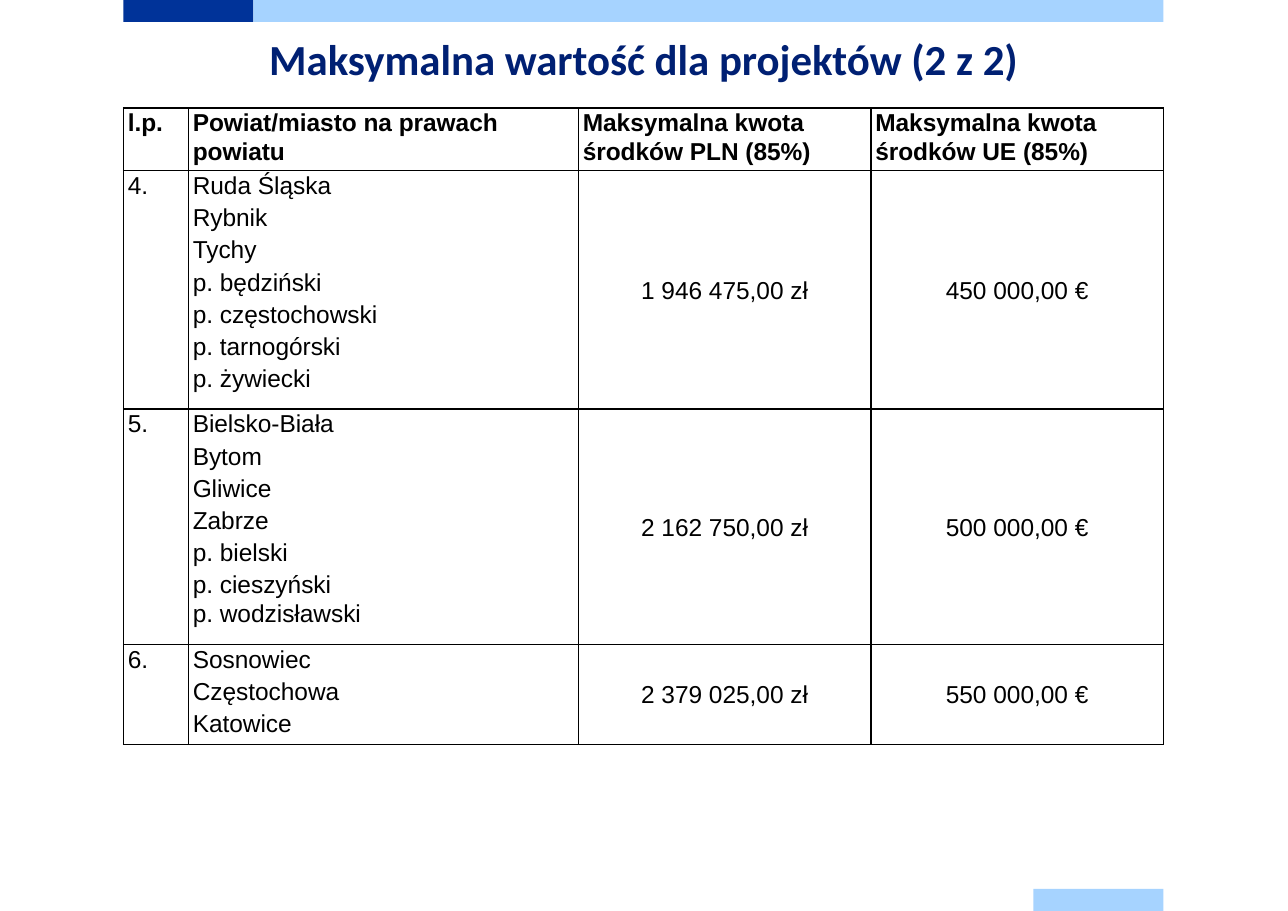
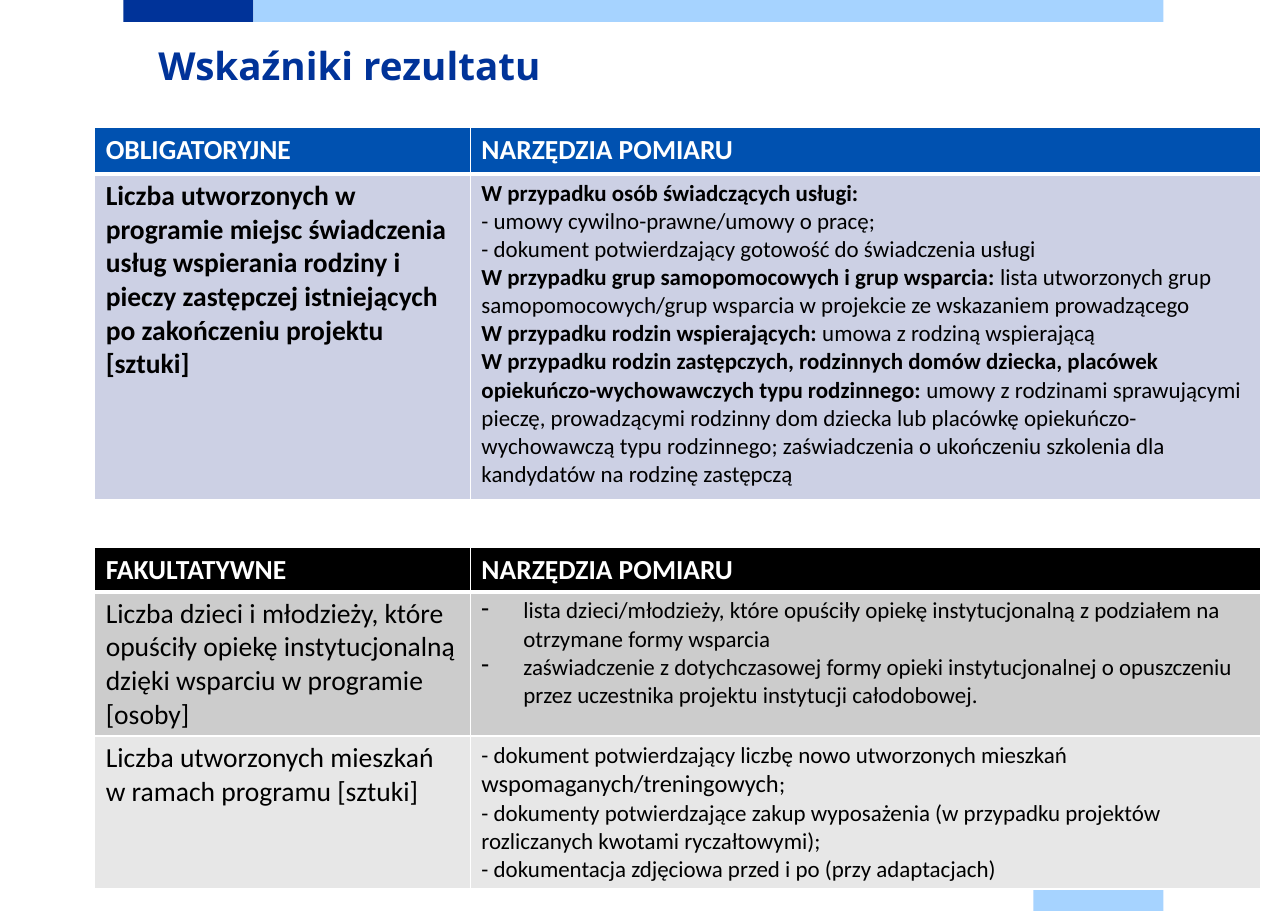
from dataclasses import dataclass

from lxml.etree import SubElement
from pptx import Presentation
from pptx.dml.color import RGBColor
from pptx.enum.shapes import MSO_SHAPE
from pptx.enum.text import MSO_ANCHOR, PP_ALIGN
from pptx.oxml import parse_xml
from pptx.oxml.ns import nsdecls, qn
from pptx.util import Inches, Pt


@dataclass(frozen=True)
class Theme:
    """Colours, fonts and type sizes of the deck."""
    navy: str = "003399"
    sky: str = "A6D3FF"
    heading: str = "002073"
    royal: str = "0051B0"
    lavender: str = "CCD0E4"
    silver: str = "CCCCCC"
    mist: str = "E7E7E7"
    black: str = "000000"
    white: str = "FFFFFF"
    amounts_font: str = "Arial"
    body_font: str = "Calibri"
    accent_font: str = "Open Sans"
    title_size: float = 28
    accent_size: float = 25.2
    title_line: float = 36
    amounts_size: float = 16
    label_size: float = 18
    detail_size: float = 15
    stressed_size: float = 16


@dataclass(frozen=True)
class TableStyle:
    """Look shared by all cells of one table."""
    font: str
    edge: str
    header_edge: float
    inset_x: float
    inset_y: float
    line_spacing: float = 1
    space_after: float = 0


@dataclass(frozen=True)
class Span:
    """Stretch of text with one look; no size means the size of its cell."""
    text: str
    bold: bool = False
    size: float = None


@dataclass(frozen=True)
class Cell:
    """Content and look of one table cell, with one tuple of spans per paragraph."""
    paragraphs: tuple
    size: float
    fill: str = None
    color: str = Theme.black
    centred: bool = False
    hanging: bool = False


THEME = Theme()
AMOUNTS = TableStyle(THEME.amounts_font, THEME.black, 1, 0.04, 0, 1.07, 2)
INDICATORS = TableStyle(THEME.body_font, THEME.white, 3, 0.1, 0.05)


class Deck:
    """Slides on a grid of 1.18 by 0.2 inch cells, starting at the left margin."""
    WIDTH, HEIGHT = 11.69, 8.27
    MARGIN, COLUMN, ROW = 1.12, 1.18, 0.2
    COLUMNS, ROWS = 8, 41.35
    HANG = 0.38

    def __init__(self, theme):
        """Open an empty presentation of the deck's size."""
        self.theme = theme
        self.presentation = Presentation()
        self.presentation.slide_width = Inches(self.WIDTH)
        self.presentation.slide_height = Inches(self.HEIGHT)
        self.slide = None

    def frame(self, column, row, columns, rows):
        """Turn grid cells into left, top, width and height."""
        return (Inches(self.MARGIN + column * self.COLUMN), Inches(row * self.ROW),
                Inches(columns * self.COLUMN), Inches(rows * self.ROW))

    def new_slide(self):
        """Start a slide with its top and bottom bands."""
        self.slide = self.presentation.slides.add_slide(self.presentation.slide_layouts[6])
        self.band(0, 0, 1, self.theme.navy)
        self.band(1, 0, self.COLUMNS - 1, self.theme.sky)
        self.band(self.COLUMNS - 1, self.ROWS - 1, 1, self.theme.sky)

    def band(self, column, row, columns, color):
        """Draw a flat band one row high."""
        strip = self.slide.shapes.add_shape(
            MSO_SHAPE.RECTANGLE, *self.frame(column, row, columns, 1))
        strip.shadow.inherit = False
        strip.fill.solid()
        strip.fill.fore_color.rgb = RGBColor.from_string(color)
        strip.line.fill.background()

    def add_span(self, paragraph, span, font, size, color):
        """Add a span to a paragraph, run by run, with its line breaks."""
        for number, line in enumerate(span.text.split("\n")):
            if number:
                paragraph.add_line_break()
            run = paragraph.add_run()
            run.text = line
            run.font.name = font
            run.font.size = Pt(span.size or size)
            run.font.bold = span.bold
            run.font.color.rgb = RGBColor.from_string(color)

    def title(self, text, column, row, font, size, color, align):
        """Set the slide title."""
        heading = self.slide.shapes.add_textbox(
            *self.frame(column, row, self.COLUMNS, 4)).text_frame
        heading.word_wrap = True
        heading.margin_left = heading.margin_right = 0
        heading.margin_top = heading.margin_bottom = 0
        paragraph = heading.paragraphs[0]
        paragraph.alignment = align
        paragraph.line_spacing = Pt(self.theme.title_line)
        self.add_span(paragraph, Span(text, True), font, size, color)

    def table(self, column, row, widths, heights, style, content):
        """Draw a table whose column widths and row heights are in grid cells."""
        grid = self.slide.shapes.add_table(
            len(heights), len(widths),
            *self.frame(column, row, sum(widths), sum(heights))).table
        grid.first_row = grid.horz_banding = False
        for place, width in zip(grid.columns, widths):
            place.width = Inches(width * self.COLUMN)
        for place, height in zip(grid.rows, heights):
            place.height = Inches(height * self.ROW)
        for r, cells in enumerate(content):
            for c, cell in enumerate(cells):
                self.fill_cell(grid.cell(r, c), cell, style)
                self.edge_cell(grid.cell(r, c), r, style)

    def fill_cell(self, target, cell, style):
        """Set the background and text of a cell."""
        target.margin_left = target.margin_right = Inches(style.inset_x)
        target.margin_top = target.margin_bottom = Inches(style.inset_y)
        target.vertical_anchor = MSO_ANCHOR.MIDDLE if cell.centred else MSO_ANCHOR.TOP
        if cell.fill:
            target.fill.solid()
            target.fill.fore_color.rgb = RGBColor.from_string(cell.fill)
        else:
            target.fill.background()
        for number, spans in enumerate(cell.paragraphs):
            frame = target.text_frame
            paragraph = frame.add_paragraph() if number else frame.paragraphs[0]
            paragraph.alignment = PP_ALIGN.CENTER if cell.centred else PP_ALIGN.LEFT
            paragraph.line_spacing = style.line_spacing
            paragraph.space_after = Pt(style.space_after)
            if cell.hanging:
                self.hang(paragraph)
            for span in spans:
                self.add_span(paragraph, span, style.font, cell.size, cell.color)

    def hang(self, paragraph):
        """Give a paragraph a dash and a hanging indent."""
        properties = paragraph._p.get_or_add_pPr()
        properties.set("marL", str(Inches(self.HANG)))
        properties.set("indent", str(-Inches(self.HANG)))
        SubElement(properties, qn("a:buChar")).set("char", "-")

    def edge_cell(self, target, row, style):
        """Draw the four borders of a cell, with the header rule under row 0."""
        weights = {"L": 1, "R": 1,
                   "T": style.header_edge if row == 1 else 1,
                   "B": style.header_edge if row == 0 else 1}
        properties = target._tc.get_or_add_tcPr()
        for number, (side, weight) in enumerate(weights.items()):
            properties.insert(number, parse_xml(
                f'<a:ln{side} {nsdecls("a")} w="{Pt(weight)}"><a:solidFill>'
                f'<a:srgbClr val="{style.edge}"/></a:solidFill></a:ln{side}>'))


def lines(*texts, bold=False):
    """Make one paragraph of each text."""
    return tuple((Span(text, bold),) for text in texts)


def led(lead, rest):
    """Make a paragraph with a bold lead."""
    return Span(lead, True), Span(rest)


def header(fill, *labels):
    """Make the white-on-colour header row of an indicator table."""
    return [Cell(lines(label, bold=True), THEME.label_size, fill, THEME.white)
            for label in labels]


def amounts_slide(deck):
    """Build the slide with the highest amounts by district."""
    size = THEME.amounts_size
    labels = ("l.p.", "Powiat/miasto na prawach powiatu",
              "Maksymalna kwota środków PLN (85%)", "Maksymalna kwota środków UE (85%)")
    groups = (
        ("4.", ("Ruda Śląska", "Rybnik", "Tychy", "p. będziński", "p. częstochowski",
                "p. tarnogórski", "p. żywiecki"), "1 946 475,00 zł", "450 000,00 €"),
        ("5.", ("Bielsko-Biała", "Bytom", "Gliwice", "Zabrze", "p. bielski",
                "p. cieszyński\np. wodzisławski"), "2 162 750,00 zł", "500 000,00 €"),
        ("6.", ("Sosnowiec", "Częstochowa", "Katowice"), "2 379 025,00 zł", "550 000,00 €"),
    )
    content = [[Cell(lines(label, bold=True), size) for label in labels]]
    for ordinal, districts, zloty, euro in groups:
        content.append([Cell(lines(ordinal), size), Cell(lines(*districts), size),
                        Cell(lines(zloty), size, centred=True),
                        Cell(lines(euro), size, centred=True)])
    deck.new_slide()
    deck.title("Maksymalna wartość dla projektów (2 z 2)", 0, 1.3, THEME.body_font,
               THEME.title_size, THEME.heading, PP_ALIGN.CENTER)
    deck.table(0, 4.9, (0.5, 3, 2.25, 2.25), (2.65, 10.05, 9.95, 4.25), AMOUNTS, content)


def indicators_slide(deck):
    """Build the slide with obligatory and optional result indicators."""
    label, detail = THEME.label_size, THEME.detail_size
    left, widths = -0.22, (2.89, 6.08)
    places = Cell(lines(
        "Liczba utworzonych w programie miejsc świadczenia usług wspierania rodziny i pieczy "
        "zastępczej istniejących po zakończeniu projektu [sztuki]", bold=True),
        label, THEME.lavender)
    places_proof = Cell((
        *lines("W przypadku osób świadczących usługi:", bold=True),
        *lines("- umowy cywilno-prawne/umowy o pracę;",
               "- dokument potwierdzający gotowość do świadczenia usługi"),
        led("W przypadku grup samopomocowych i grup wsparcia: ",
            "lista utworzonych grup samopomocowych/grup wsparcia w projekcie "
            "ze wskazaniem prowadzącego"),
        led("W przypadku rodzin wspierających: ", "umowa z rodziną wspierającą"),
        led("W przypadku rodzin zastępczych, rodzinnych domów dziecka, placówek "
            "opiekuńczo-wychowawczych typu rodzinnego: ",
            "umowy z rodzinami sprawującymi pieczę, prowadzącymi rodzinny dom dziecka lub "
            "placówkę opiekuńczo-wychowawczą typu rodzinnego; zaświadczenia o ukończeniu "
            "szkolenia dla kandydatów na rodzinę zastępczą"),
    ), detail, THEME.lavender)
    children = Cell(lines(
        "Liczba dzieci i młodzieży, które opuściły opiekę instytucjonalną dzięki wsparciu "
        "w programie [osoby]"), label, THEME.silver)
    children_proof = Cell(lines(
        "lista dzieci/młodzieży, które opuściły opiekę instytucjonalną z podziałem na "
        "otrzymane formy wsparcia",
        "zaświadczenie z dotychczasowej formy opieki instytucjonalnej o opuszczeniu przez "
        "uczestnika projektu instytucji całodobowej."), detail, THEME.silver, hanging=True)
    flats = Cell(lines("Liczba utworzonych mieszkań w ramach programu [sztuki]"),
                 label, THEME.mist)
    flats_proof = Cell((
        (Span("- dokument potwierdzający liczbę nowo utworzonych mieszkań "),
         Span("wspomaganych/treningowych", size=THEME.stressed_size), Span(";")),
        *lines("- dokumenty potwierdzające zakup wyposażenia (w przypadku projektów "
               "rozliczanych kwotami ryczałtowymi);",
               "- dokumentacja zdjęciowa przed i po (przy adaptacjach)"),
    ), detail, THEME.mist)
    deck.new_slide()
    deck.table(left, 24.85, widths, (2, 6.55, 6.95), INDICATORS,
               [header(THEME.black, "FAKULTATYWNE", "NARZĘDZIA POMIARU"),
                [children, children_proof], [flats, flats_proof]])
    deck.table(left, 5.8, widths, (2.1, 14.8), INDICATORS,
               [header(THEME.royal, "OBLIGATORYJNE", "NARZĘDZIA POMIARU"),
                [places, places_proof]])
    deck.title("Wskaźniki rezultatu", 0.27, 1.5, THEME.accent_font,
               THEME.accent_size, THEME.navy, PP_ALIGN.LEFT)


def main():
    """Build both slides and save them."""
    deck = Deck(THEME)
    amounts_slide(deck)
    indicators_slide(deck)
    deck.presentation.save("out.pptx")


if __name__ == "__main__":
    main()
